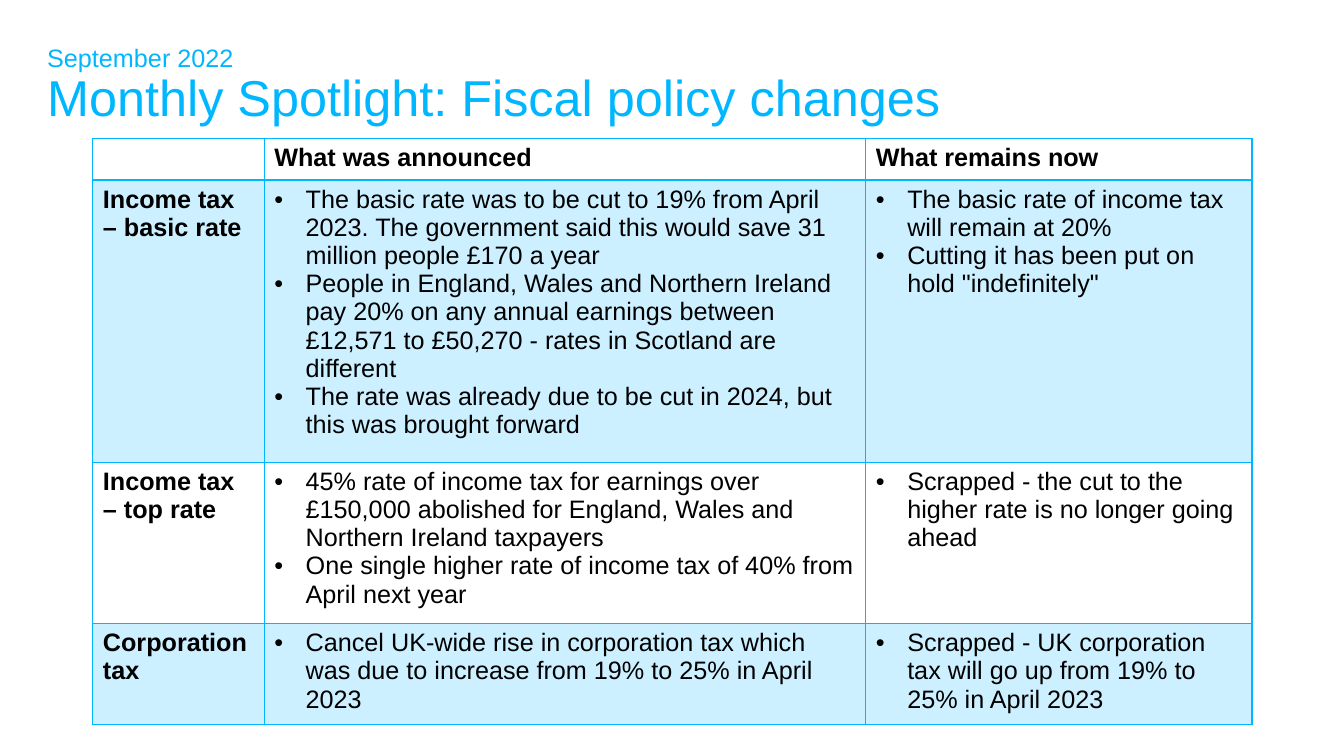
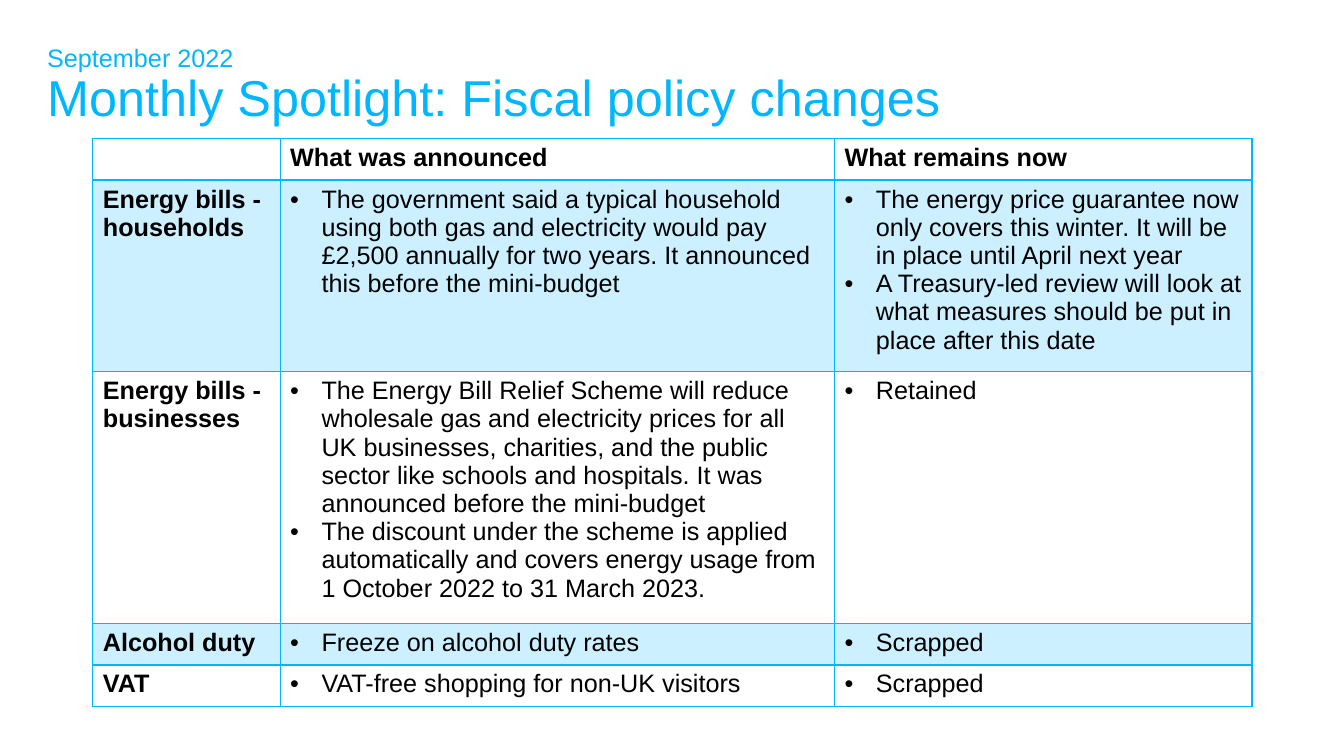
from dataclasses import dataclass

from lxml.etree import SubElement
from pptx import Presentation
from pptx.dml.color import RGBColor as Rgb
from pptx.enum.text import MSO_VERTICAL_ANCHOR as Anchor
from pptx.oxml.ns import qn
from pptx.slide import Slide
from pptx.table import _Cell as Cell
from pptx.text.text import _Paragraph as Paragraph
from pptx.util import Cm, Pt


@dataclass(frozen=True)
class Theme:
    font: str = "Arial"
    accent: str = "00B7FF"
    ink: str = "000000"
    band_opacity: int = 20
    body_size: int = 18
    title_size: int = 36
    rule: int = 1
    header_rule: int = 2
    bullet_indent: float = 0.79


@dataclass(frozen=True)
class Measure:
    name: str
    announced: tuple[str, ...]
    remaining: tuple[str, ...]
    height: float


@dataclass(frozen=True)
class Spotlight:
    column_widths: tuple[float, float, float]
    measures: tuple[Measure, ...]


THEME = Theme()
MONTH = "September 2022"
HEADLINE = "Monthly Spotlight: Fiscal policy changes"
HEADINGS = ("", "What was announced", "What remains now")
HEADER_HEIGHT = 1.04

SPOTLIGHTS = (
    Spotlight(
        (4.32, 15.16, 9.73),
        (
            Measure(
                "Income tax – basic rate",
                (
                    "The basic rate was to be cut to 19% from April 2023. "
                    "The government said this would save 31 million people £170 a year",
                    "People in England, Wales and Northern Ireland pay 20% on any annual "
                    "earnings between £12,571 to £50,270 - rates in Scotland are different",
                    "The rate was already due to be cut in 2024, but this was brought forward",
                ),
                (
                    "The basic rate of income tax will remain at 20%",
                    'Cutting it has been put on hold "indefinitely"',
                ),
                6.65,
            ),
            Measure(
                "Income tax – top rate",
                (
                    "45% rate of income tax for earnings over £150,000 abolished for "
                    "England, Wales and Northern Ireland taxpayers",
                    "One single higher rate of income tax of 40% from April next year",
                ),
                ("Scrapped - the cut to the higher rate is no longer going ahead",),
                3.81,
            ),
            Measure(
                "Corporation tax",
                (
                    "Cancel UK-wide rise in corporation tax which was due to increase "
                    "from 19% to 25% in April 2023",
                ),
                ("Scrapped - UK corporation tax will go up from 19% to 25% in April 2023",),
                2.38,
            ),
        ),
    ),
    Spotlight(
        (4.72, 13.97, 10.52),
        (
            Measure(
                "Energy bills - households",
                (
                    "The government said a typical household using both gas and "
                    "electricity would pay £2,500 annually for two years. It announced "
                    "this before the mini-budget",
                ),
                (
                    "The energy price guarantee now only covers this winter. "
                    "It will be in place until April next year",
                    "A Treasury-led review will look at what measures should be put "
                    "in place after this date",
                ),
                4.53,
            ),
            Measure(
                "Energy bills - businesses",
                (
                    "The Energy Bill Relief Scheme will reduce wholesale gas and "
                    "electricity prices for all UK businesses, charities, and the public "
                    "sector like schools and hospitals. It was announced before the "
                    "mini-budget",
                    "The discount under the scheme is applied automatically and covers "
                    "energy usage from 1 October 2022 to 31 March 2023.",
                ),
                ("Retained",),
                5.99,
            ),
            Measure("Alcohol duty", ("Freeze on alcohol duty rates",), ("Scrapped",), 1.04),
            Measure("VAT", ("VAT-free shopping for non-UK visitors",), ("Scrapped",), 1.04),
        ),
    ),
)


def style_runs(paragraph: Paragraph, size: int, color: str, bold: bool = False) -> None:
    for run in paragraph.runs:
        run.font.name = THEME.font
        run.font.size = Pt(size)
        run.font.bold = bold
        run.font.color.rgb = Rgb.from_string(color)


def add_bullet(paragraph: Paragraph) -> None:
    properties = paragraph._p.get_or_add_pPr()
    properties.set("marL", str(Cm(THEME.bullet_indent)))
    properties.set("indent", str(-Cm(THEME.bullet_indent)))
    SubElement(properties, qn("a:buFont"), typeface=THEME.font)
    SubElement(properties, qn("a:buChar"), char="•")


def draw_borders(cell: Cell, top: int, bottom: int) -> None:
    properties = cell._tc.get_or_add_tcPr()
    widths = {"lnL": THEME.rule, "lnR": THEME.rule, "lnT": top, "lnB": bottom}
    for edge, width in widths.items():
        border = SubElement(properties, qn(f"a:{edge}"), w=str(Pt(width)))
        paint = SubElement(border, qn("a:solidFill"))
        SubElement(paint, qn("a:srgbClr"), val=THEME.accent)


def fill_cell(cell: Cell, banded: bool) -> None:
    if not banded:
        cell.fill.background()
        return
    cell.fill.solid()
    cell.fill.fore_color.rgb = Rgb.from_string(THEME.accent)
    tint = cell._tc.tcPr.find(f"{qn('a:solidFill')}/{qn('a:srgbClr')}")
    SubElement(tint, qn("a:alpha"), val=str(THEME.band_opacity * 1000))


def write_cell(cell: Cell, lines: tuple[str, ...], bulleted: bool) -> None:
    cell.text_frame.text = "\n".join(lines)
    for paragraph in cell.text_frame.paragraphs:
        if bulleted:
            add_bullet(paragraph)
        style_runs(paragraph, THEME.body_size, THEME.ink, bold=not bulleted)


def draw_title(slide: Slide) -> None:
    frame = slide.shapes.add_textbox(Cm(0.94), Cm(0.84), Cm(32), Cm(2.67)).text_frame
    frame.word_wrap = True
    frame.vertical_anchor = Anchor.MIDDLE
    title = frame.paragraphs[0]
    title.text = f"{MONTH}\v{HEADLINE}"
    title.line_spacing = 0.9
    style_runs(title, THEME.title_size, THEME.accent)
    title.runs[0].font.size = Pt(THEME.body_size)


def draw_measures(slide: Slide, spotlight: Spotlight) -> None:
    heights = [HEADER_HEIGHT] + [measure.height for measure in spotlight.measures]
    contents = [tuple((heading,) for heading in HEADINGS)] + [
        ((measure.name,), measure.announced, measure.remaining)
        for measure in spotlight.measures
    ]
    table = slide.shapes.add_table(
        len(contents), len(HEADINGS), Cm(2.34), Cm(3.5),
        Cm(sum(spotlight.column_widths)), Cm(sum(heights)),
    ).table
    table.first_row = True
    table.horz_banding = False
    for column, width in zip(table.columns, spotlight.column_widths):
        column.width = Cm(width)
    for index, (row, height, entries) in enumerate(zip(table.rows, heights, contents)):
        row.height = Cm(height)
        top = THEME.header_rule if index == 1 else THEME.rule
        bottom = THEME.header_rule if index == 0 else THEME.rule
        for position, (cell, lines) in enumerate(zip(row.cells, entries)):
            draw_borders(cell, top, bottom)
            fill_cell(cell, banded=index % 2 == 1)
            write_cell(cell, lines, bulleted=index > 0 and position > 0)


def main() -> None:
    deck = Presentation()
    deck.slide_width, deck.slide_height = Cm(33.87), Cm(19.05)
    blank = deck.slide_layouts[6]
    for spotlight in SPOTLIGHTS:
        slide = deck.slides.add_slide(blank)
        draw_title(slide)
        draw_measures(slide, spotlight)
    deck.save("out.pptx")


if __name__ == "__main__":
    main()
